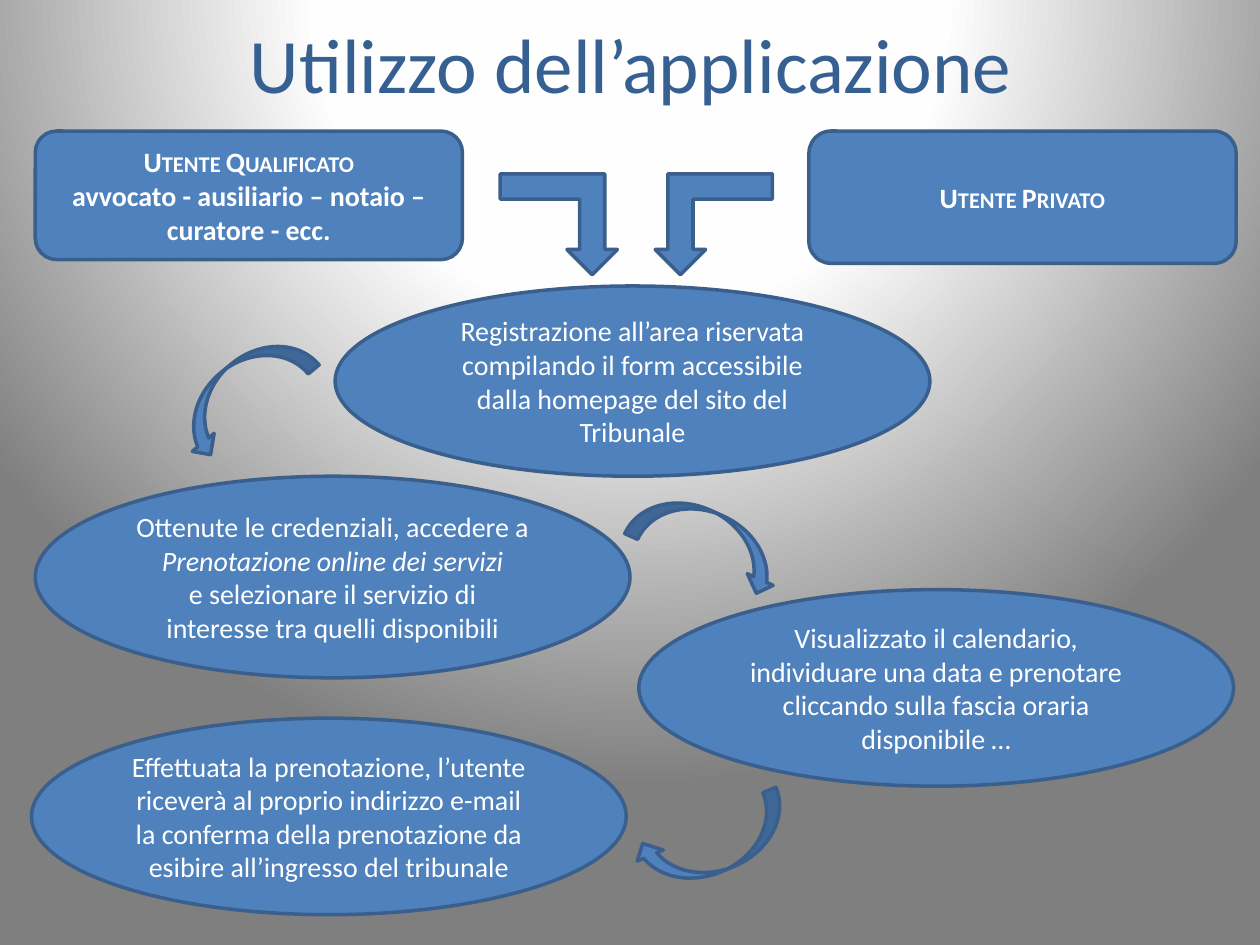
from lxml import etree
from pptx import Presentation
from pptx.dml.color import RGBColor
from pptx.enum.shapes import MSO_SHAPE
from pptx.enum.text import MSO_ANCHOR, PP_ALIGN
from pptx.oxml.ns import qn
from pptx.util import Inches, Pt

ELLIPSE = MSO_SHAPE.OVAL
ROUNDED = MSO_SHAPE.ROUNDED_RECTANGLE
BENT_ARROW = MSO_SHAPE.BENT_UP_ARROW
RIGHT_ARC = MSO_SHAPE.CURVED_RIGHT_ARROW
LEFT_ARC = MSO_SHAPE.CURVED_LEFT_ARROW
MIDDLE = MSO_ANCHOR.MIDDLE
CENTER = PP_ALIGN.CENTER


def color(value):
    return RGBColor.from_string(value)


def write(shape, lines, size, text_color):
    frame = shape.text_frame
    frame.word_wrap = True
    frame.vertical_anchor = MIDDLE
    for index, (text, style) in enumerate(lines):
        paragraph = frame.paragraphs[0] if index == 0 else frame.add_paragraph()
        paragraph.text = text
        paragraph.alignment = CENTER
        paragraph.font.name = "Calibri"
        paragraph.font.size = Pt(size)
        paragraph.font.color.rgb = color(text_color)
        paragraph.font.bold = style in ("bold", "small caps")
        paragraph.font.italic = style == "italic"
        if style == "small caps":
            paragraph.runs[0].font.bold = True
            paragraph.runs[0]._r.get_or_add_rPr().set("cap", "small")


presentation = Presentation()
presentation.slide_width = Inches(10)
presentation.slide_height = Inches(7.5)
slide = presentation.slides.add_slide(presentation.slide_layouts[6])

background = slide.background.fill
background.gradient()
gradient = slide._element.find(".//" + qn("a:gradFill"))
for child in list(gradient):
    gradient.remove(child)
stops = etree.SubElement(gradient, qn("a:gsLst"))
for position, value in [(0, "FFFFFF"), (40, "FEFEFE"), (100, "7F7F7F")]:
    stop = etree.SubElement(stops, qn("a:gs"), pos=str(position * 1000))
    etree.SubElement(stop, qn("a:srgbClr"), val=value)
circle = etree.SubElement(gradient, qn("a:path"), path="circle")
etree.SubElement(circle, qn("a:fillToRect"), l="50000", t="-80000", r="50000", b="180000")

title = slide.shapes.add_textbox(Inches(0.51), Inches(0), Inches(9), Inches(0.99))
write(title, [("Utilizzo dell’applicazione", "plain")], 44, "376092")

boxes = [
    (ROUNDED, 0.28, 1.04, 3.39, 1.02, [
        ("Utente Qualificato", "small caps"),
        ("avvocato - ausiliario – notaio – curatore - ecc.", "bold")]),
    (ROUNDED, 6.42, 1.04, 3.39, 1.05, [("Utente Privato", "small caps")]),
    (ELLIPSE, 2.66, 2.27, 4.72, 1.51, [
        ("Registrazione all’area riservata compilando il form accessibile "
         "dalla homepage del sito del Tribunale", "plain")]),
    (ELLIPSE, 0.28, 3.78, 4.72, 1.6, [
        ("Ottenute le credenziali, accedere a", "plain"),
        ("Prenotazione online dei servizi", "italic"),
        ("e selezionare il servizio di interesse tra quelli disponibili", "plain")]),
    (ELLIPSE, 5.07, 4.68, 4.72, 1.56, [
        ("Visualizzato il calendario, individuare una data e prenotare "
         "cliccando sulla fascia oraria disponibile …", "plain")]),
    (ELLIPSE, 0.25, 5.7, 4.72, 1.56, [
        ("Effettuata la prenotazione, l’utente riceverà al proprio indirizzo e-mail "
         "la conferma della prenotazione da esibire all’ingresso del tribunale", "plain")]),
]
arrows = [
    (BENT_ARROW, 5.2, 1.38, 0.93, 0.8, 180, False),
    (BENT_ARROW, 3.97, 1.38, 0.93, 0.8, 180, True),
    (RIGHT_ARC, 1.69, 2.5, 0.45, 1.23, 50.4, False),
    (LEFT_ARC, 5.4, 3.66, 0.45, 1.26, 294.4, False),
    (LEFT_ARC, 5.44, 6.07, 0.45, 1.26, 67.1, False),
]
diagram = [(*box, 0, False) for box in boxes]
diagram += [(*arrow[:5], [], *arrow[5:]) for arrow in arrows]

for kind, left, top, width, height, lines, rotation, flipped in diagram:
    shape = slide.shapes.add_shape(
        kind, Inches(left), Inches(top), Inches(width), Inches(height))
    shape.shadow.inherit = False
    shape.fill.solid()
    shape.fill.fore_color.rgb = color("4F81BD")
    shape.line.color.rgb = color("3A5F8C")
    shape.line.width = Pt(2)
    shape.rotation = rotation
    if flipped:
        shape._element.spPr.find(qn("a:xfrm")).set("flipH", "1")
    write(shape, lines, 16, "FFFFFF")

presentation.save("out.pptx")
